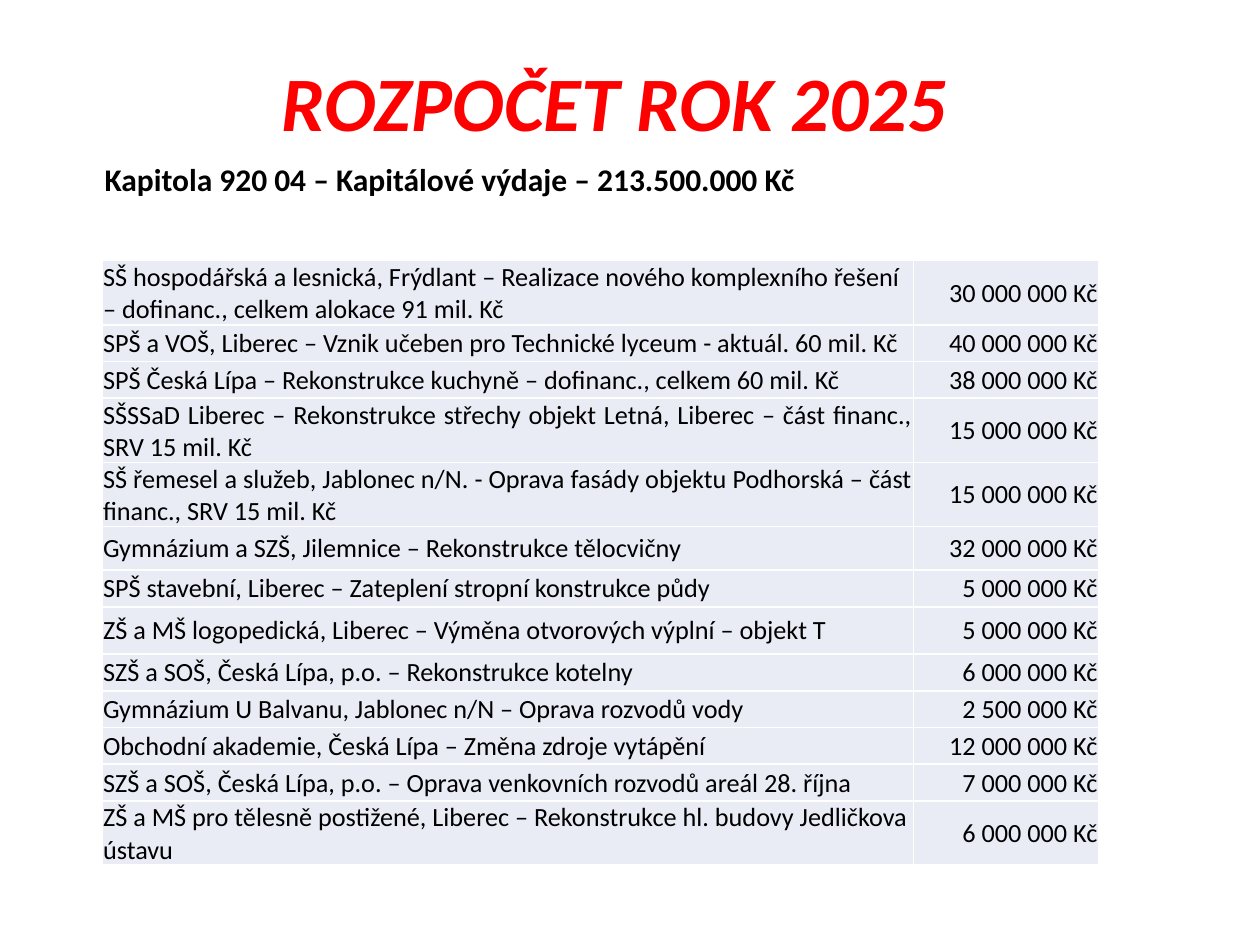
import pptx
import pptx.util
import pptx.dml.color
import pptx.enum.text
import pptx.oxml
import pptx.oxml.ns
from dataclasses import dataclass

Pt = pptx.util.Pt
RGB = pptx.dml.color.RGBColor.from_string
ALIGN = pptx.enum.text.PP_ALIGN
ANCHOR = pptx.enum.text.MSO_ANCHOR


@dataclass(frozen=True)
class Theme:
    font: str = "Calibri"
    title_color: str = "FF0000"
    text_color: str = "000000"
    cell_fill: str = "E9EBF5"
    border: str = "FFFFFF"
    title_size: int = 44
    heading_size: int = 18
    cell_size: int = 15


THEME = Theme()
COLUMN_WIDTHS = (463.7, 105.8)
ROW_HEIGHT = 21
LEFT, JUSTIFY = ALIGN.LEFT, ALIGN.JUSTIFY

BUDGET = [
    ("SŠ hospodářská a lesnická, Frýdlant – Realizace nového komplexního řešení – dofinanc., celkem alokace 91 mil. Kč",
     "30 000 000 Kč", LEFT, ROW_HEIGHT),
    ("SPŠ a VOŠ, Liberec – Vznik učeben pro Technické lyceum - aktuál. 60 mil. Kč",
     "40 000 000 Kč", JUSTIFY, ROW_HEIGHT),
    ("SPŠ Česká Lípa – Rekonstrukce kuchyně – dofinanc., celkem 60 mil. Kč",
     "38 000 000 Kč", JUSTIFY, ROW_HEIGHT),
    ("SŠSSaD Liberec – Rekonstrukce střechy objekt Letná, Liberec – část financ., SRV 15 mil. Kč",
     "15 000 000 Kč", JUSTIFY, ROW_HEIGHT),
    ("SŠ řemesel a služeb, Jablonec n/N. - Oprava fasády objektu Podhorská – část financ., SRV 15 mil. Kč",
     "15 000 000 Kč", JUSTIFY, ROW_HEIGHT),
    ("Gymnázium a SZŠ, Jilemnice – Rekonstrukce tělocvičny",
     "32 000 000 Kč", JUSTIFY, 25),
    ("SPŠ stavební, Liberec – Zateplení stropní konstrukce půdy",
     "5 000 000 Kč", JUSTIFY, ROW_HEIGHT),
    ("ZŠ a MŠ logopedická, Liberec – Výměna otvorových výplní – objekt T",
     "5 000 000 Kč", LEFT, 27),
    ("SZŠ a SOŠ, Česká Lípa, p.o. – Rekonstrukce kotelny",
     "6 000 000 Kč", LEFT, ROW_HEIGHT),
    ("Gymnázium U Balvanu, Jablonec n/N – Oprava rozvodů vody",
     "2 500 000 Kč", LEFT, ROW_HEIGHT),
    ("Obchodní akademie, Česká Lípa – Změna zdroje vytápění",
     "12 000 000 Kč", LEFT, ROW_HEIGHT),
    ("SZŠ a SOŠ, Česká Lípa, p.o. – Oprava venkovních rozvodů areál 28. října",
     "7 000 000 Kč", LEFT, ROW_HEIGHT),
    ("ZŠ a MŠ pro tělesně postižené, Liberec – Rekonstrukce hl. budovy Jedličkova ústavu",
     "6 000 000 Kč", LEFT, ROW_HEIGHT),
]


def write(tf, text, size, color, align, bold=False, italic=False):
    tf.text = text
    p = tf.paragraphs[0]
    p.alignment = align
    font = p.runs[0].font
    font.name = THEME.font
    font.size = Pt(size)
    font.bold = bold
    font.italic = italic
    font.color.rgb = RGB(color)


def add_text(slide, box, *style, **emphasis):
    tf = slide.shapes.add_textbox(*map(Pt, box)).text_frame
    tf.word_wrap = True
    tf.auto_size = pptx.enum.text.MSO_AUTO_SIZE.SHAPE_TO_FIT_TEXT
    write(tf, *style, **emphasis)


def add_title(slide, box):
    add_text(slide, box, "ROZPOČET ROK 2025", THEME.title_size,
             THEME.title_color, ALIGN.CENTER, bold=True, italic=True)


def add_heading(slide, box):
    add_text(slide, box, "Kapitola 920 04 – Kapitálové výdaje – 213.500.000 Kč",
             THEME.heading_size, THEME.text_color, LEFT, bold=True)


def set_borders(cell):
    tcPr = cell._tc.get_or_add_tcPr()
    for i, side in enumerate(("lnL", "lnR", "lnT", "lnB")):
        tcPr.insert(i, pptx.oxml.parse_xml(
            f'<a:{side} {pptx.oxml.ns.nsdecls("a")} w="{Pt(1)}"><a:solidFill>'
            f'<a:srgbClr val="{THEME.border}"/></a:solidFill></a:{side}>'))


def fill_cell(cell, text, align):
    cell.margin_left = cell.margin_right = cell.margin_top = Pt(0.6)
    cell.margin_bottom = Pt(0)
    cell.vertical_anchor = ANCHOR.MIDDLE
    cell.fill.solid()
    cell.fill.fore_color.rgb = RGB(THEME.cell_fill)
    set_borders(cell)
    write(cell.text_frame, text, THEME.cell_size, THEME.text_color, align)


def add_budget_table(slide, box):
    frame = slide.shapes.add_table(len(BUDGET), len(COLUMN_WIDTHS), *map(Pt, box))
    table = frame.table
    table.first_row = table.horz_banding = False
    for column, width in zip(table.columns, COLUMN_WIDTHS):
        column.width = Pt(width)
    for i, (project, amount, align, height) in enumerate(BUDGET):
        table.rows[i].height = Pt(height)
        fill_cell(table.cell(i, 0), project, align)
        fill_cell(table.cell(i, 1), amount, ALIGN.RIGHT)


def main():
    prs = pptx.Presentation()
    prs.slide_width, prs.slide_height = Pt(720), Pt(540)
    slide = prs.slides.add_slide(prs.slide_layouts[6])
    add_title(slide, (121.5, 27.5, 459.5, 60.5))
    add_heading(slide, (52.7, 88, 596, 29))
    add_budget_table(slide, (58.3, 149, sum(COLUMN_WIDTHS), sum(row[3] for row in BUDGET)))
    prs.save("out.pptx")


if __name__ == "__main__":
    main()
